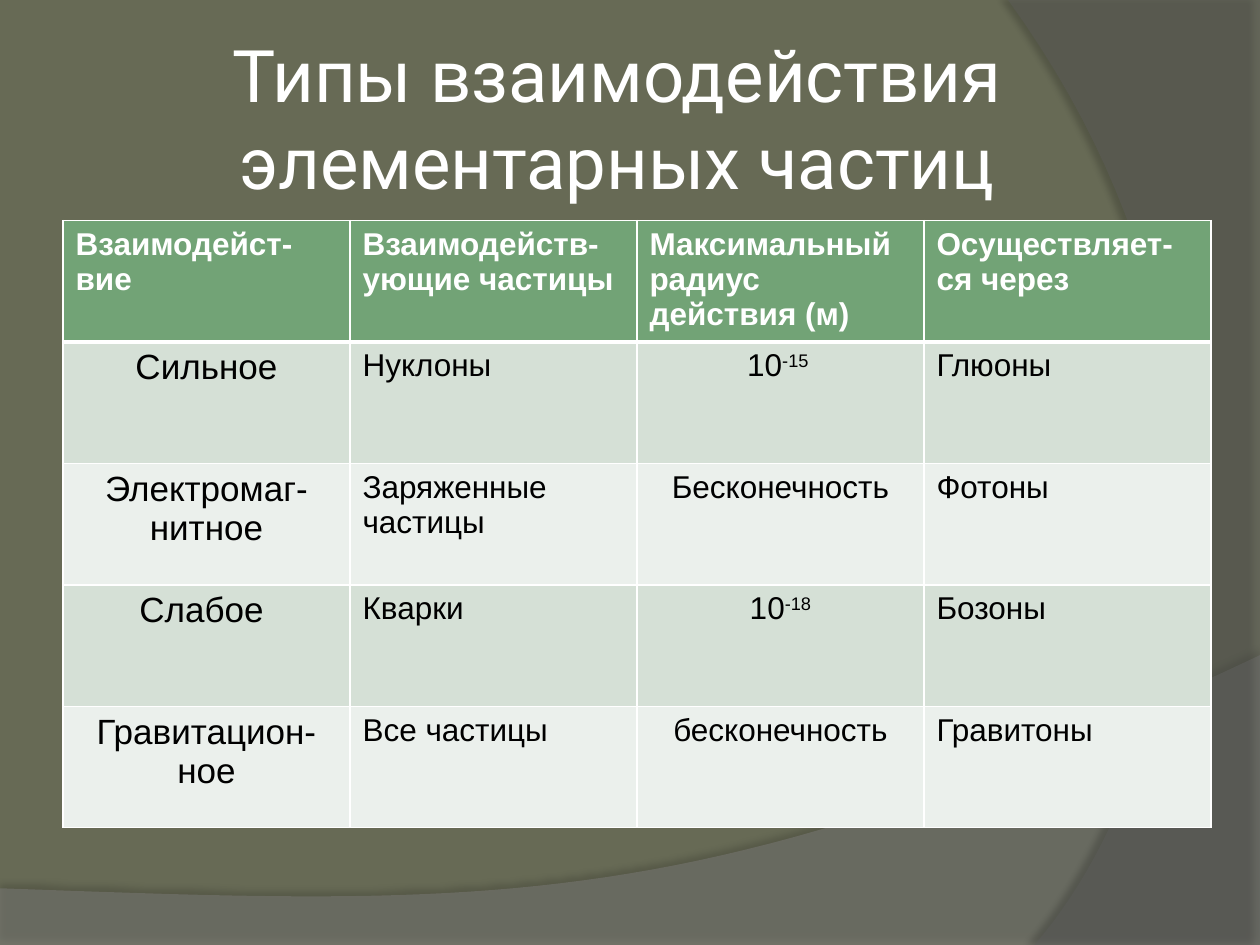
from dataclasses import dataclass

import pptx
import pptx.dml.color
import pptx.enum.text
import pptx.oxml
import pptx.oxml.ns
import pptx.util

Pt = pptx.util.Pt
ALIGN = pptx.enum.text.PP_ALIGN
ANCHOR = pptx.enum.text.MSO_ANCHOR
NS = pptx.oxml.ns.nsdecls("a")
COLORS = {
    "back": "676A55", "low": "7F7F7F", "side": "5E5E5E", "shade": "000000",
    "head": "72A376", "odd": "D5E0D6", "even": "EBF0EC",
    "white": "FFFFFF", "text": "000000",
}


@dataclass
class Wave:
    """A background shape: straight corners, then one Bezier curve."""
    corners: list
    curve: list
    color: str
    alpha: int
    shade: int
    dist: float
    angle: int


@dataclass
class Style:
    size: float
    color: str
    bold: bool = False
    font: str = "Arial"


WAVES = [
    Wave([(0, 507.6), (0, 540), (720, 540)],
         [(720, 374.4), (402.5, 524.9), (281.5, 517.7), (0, 507.6)],
         "low", 45, 35, 3.5, 270),
    Wave([(720, 0), (720, 540)],
         [(591.1, 540), (673.2, 445.7), (733, 216), (576, 0)],
         "side", 40, 45, 4, 180),
]
HEADS = ["Взаимодейст-вие", "Взаимодейств-ующие частицы",
         "Максимальный радиус действия (м)", "Осуществляет-ся через"]
# A caret marks the start of a superscript
ROWS = [
    ["Сильное", "Нуклоны", "10^-15 ", "Глюоны"],
    ["Электромаг-нитное", "Заряженные частицы", "Бесконечность", "Фотоны"],
    ["Слабое ", "Кварки", "10^-18", "Бозоны"],
    ["Гравитацион-ное", "Все частицы", "бесконечность", "Гравитоны"],
]


def rgb(name: str) -> pptx.dml.color.RGBColor:
    return pptx.dml.color.RGBColor.from_string(COLORS[name])


def bezier(ends: list, steps: int = 48) -> list:
    points = []
    for step in range(steps + 1):
        t = step / steps
        parts = ((1 - t) ** 3, 3 * t * (1 - t) ** 2, 3 * t * t * (1 - t), t ** 3)
        points.append(tuple(sum(w * p[axis] for w, p in zip(parts, ends))
                            for axis in (0, 1)))
    return points


def draw_wave(slide, wave: Wave) -> None:
    points = [(Pt(x), Pt(y)) for x, y in wave.corners + bezier(wave.curve)]
    pen = slide.shapes.build_freeform(*points[0])
    pen.add_line_segments(points[1:], close=True)
    shape = pen.convert_to_shape()
    shape.fill.solid()
    shape.fill.fore_color.rgb = rgb(wave.color)
    shape.line.fill.background()
    shape.shadow.inherit = False
    props = shape.element.spPr
    tint = props.find(".//" + pptx.oxml.ns.qn("a:srgbClr"))
    tint.append(pptx.oxml.parse_xml(f'<a:alpha {NS} val="{wave.alpha * 1000}"/>'))
    props.find(pptx.oxml.ns.qn("a:effectLst")).append(pptx.oxml.parse_xml(
        f'<a:outerShdw {NS} blurRad="{Pt(4)}" dist="{Pt(wave.dist)}" '
        f'dir="{wave.angle * 60000}" algn="ctr" rotWithShape="0">'
        f'<a:srgbClr val="{COLORS["shade"]}">'
        f'<a:alpha val="{wave.shade * 1000}"/></a:srgbClr></a:outerShdw>'))


def format_run(run, style: Style) -> None:
    run.font.name = style.font
    run.font.size = Pt(style.size)
    run.font.bold = style.bold
    run.font.color.rgb = rgb(style.color)


def draw_title(slide, text: str) -> None:
    title = slide.shapes.title
    title.left, title.top = Pt(36), Pt(21.6)
    title.width, title.height = Pt(633.6), Pt(90)
    frame = title.text_frame
    frame.text = text
    frame.word_wrap = True
    frame.auto_size = pptx.enum.text.MSO_AUTO_SIZE.NONE
    frame.vertical_anchor = ANCHOR.MIDDLE
    frame.margin_left = frame.margin_right = Pt(3.6)
    frame.margin_top = frame.margin_bottom = Pt(3.6)
    para = frame.paragraphs[0]
    para.alignment = ALIGN.CENTER
    format_run(para.runs[0], Style(41.4, "white", font="Roboto"))
    # Bring the title in front of the waves
    title.element.getparent().append(title.element)


def set_edges(cell, head: bool, below: bool) -> None:
    props = cell._tc.get_or_add_tcPr()
    widths = {"L": 1, "R": 1, "T": 3 if below else 1, "B": 3 if head else 1}
    for spot, (side, width) in enumerate(widths.items()):
        props.insert(spot, pptx.oxml.parse_xml(
            f'<a:ln{side} {NS} w="{Pt(width)}"><a:solidFill>'
            f'<a:srgbClr val="{COLORS["white"]}"/></a:solidFill></a:ln{side}>'))


def fill_cell(cell, text: str, row: int, col: int) -> None:
    head = row == 0
    cell.fill.solid()
    cell.fill.fore_color.rgb = rgb("head" if head else "odd" if row % 2 else "even")
    cell.vertical_anchor = ANCHOR.TOP
    base, _, power = text.partition("^")
    para = cell.text_frame.paragraphs[0]
    para.text = base
    para.alignment = ALIGN.CENTER if not head and col in (0, 2) else ALIGN.LEFT
    if power:
        run = para.add_run()
        run.text = power
        run.font._element.set("baseline", "30000")
    style = Style(18, "white", True) if head else Style(18 if col else 20, "text")
    for run in para.runs:
        format_run(run, style)
    set_edges(cell, head, row == 1)


def draw_table(slide, rows: list) -> None:
    table = slide.shapes.add_table(
        len(rows), len(rows[0]), Pt(36), Pt(126), Pt(656), Pt(347)).table
    table.first_row = table.horz_banding = False
    for column in table.columns:
        column.width = Pt(164)
    for r, texts in enumerate(rows):
        table.rows[r].height = Pt(69.4)
        for c, text in enumerate(texts):
            fill_cell(table.cell(r, c), text, r, c)


def main() -> None:
    deck = pptx.Presentation()
    deck.slide_width, deck.slide_height = Pt(720), Pt(540)
    slide = deck.slides.add_slide(deck.slide_layouts[5])
    # Background
    slide.background.fill.solid()
    slide.background.fill.fore_color.rgb = rgb("back")
    for wave in WAVES:
        draw_wave(slide, wave)
    # Content
    draw_title(slide, "Типы взаимодействия элементарных частиц")
    draw_table(slide, [HEADS] + ROWS)
    deck.save("out.pptx")


if __name__ == "__main__":
    main()
